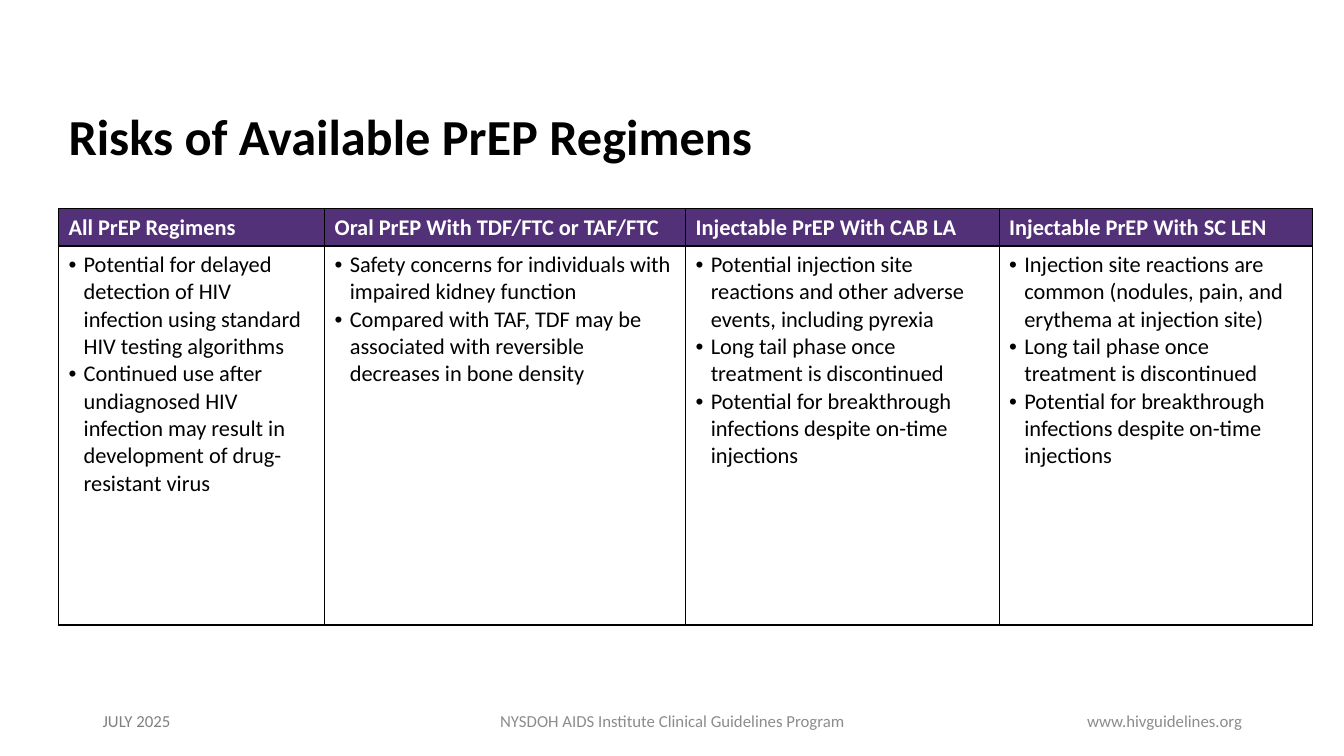
from lxml import etree
from pptx import Presentation
from pptx.dml.color import RGBColor
from pptx.enum.text import MSO_ANCHOR, PP_ALIGN
from pptx.oxml.ns import qn
from pptx.util import Inches, Pt

LEFT, CENTER, RIGHT = PP_ALIGN.LEFT, PP_ALIGN.CENTER, PP_ALIGN.RIGHT
MIDDLE = MSO_ANCHOR.MIDDLE
TITLE_ONLY = 5

LONG_TAIL = "Long tail phase once treatment is discontinued"
BREAKTHROUGH = "Potential for breakthrough infections despite on-time injections"
REGIMENS = [
    ("All PrEP Regimens", 2.64, [
        "Potential for delayed detection of HIV infection using standard HIV testing algorithms",
        "Continued use after undiagnosed HIV infection may result in development of drug-resistant virus",
    ]),
    ("Oral PrEP With TDF/FTC or TAF/FTC", 3.58, [
        "Safety concerns for individuals with impaired kidney function",
        "Compared with TAF, TDF may be associated with reversible decreases in bone density",
    ]),
    ("Injectable PrEP With CAB LA", 3.11, [
        "Potential injection site reactions and other adverse events, including pyrexia",
        LONG_TAIL,
        BREAKTHROUGH,
    ]),
    ("Injectable PrEP With SC LEN", 3.11, [
        "Injection site reactions are common (nodules, pain, and erythema at injection site)",
        LONG_TAIL,
        BREAKTHROUGH,
    ]),
]
FOOTERS = [
    ("NYSDOH AIDS Institute Clinical Guidelines Program", 4.42, 4.5, CENTER, "8C8C8C"),
    ("www.hivguidelines.org", 9.42, 3, RIGHT, "8C8C8C"),
    ("JULY 2025", 0.92, 3, LEFT, "808080"),
]


def rgb(value):
    """Return the colour for a hex string."""
    return RGBColor.from_string(value)


class SlideBuilder:
    """Holds the style and the current slide."""

    font = "Calibri"
    black = "000000"
    white = "FFFFFF"
    purple = "523178"

    def __init__(self, prs):
        """Add a title-only slide."""
        self.s = prs.slides.add_slide(prs.slide_layouts[TITLE_ONLY])

    def format(self, p, size, color, bold=False, align=LEFT):
        """Format a paragraph and its runs."""
        p.alignment = align
        for r in p.runs:
            r.font.name = self.font
            r.font.size = Pt(size)
            r.font.bold = bold
            r.font.color.rgb = rgb(color)

    def title(self, text, x, y, w, h):
        """Place and format the title."""
        sp = self.s.shapes.title
        sp.left, sp.top, sp.width, sp.height = map(Inches, (x, y, w, h))
        tf = sp.text_frame
        tf.text = text
        tf.word_wrap = True
        tf.vertical_anchor = MIDDLE
        tf.paragraphs[0].line_spacing = 0.9
        self.format(tf.paragraphs[0], 36, self.black, bold=True)

    def footer(self, text, x, w, align, color):
        """Add one footer text."""
        sp = self.s.shapes.add_textbox(Inches(x), Inches(6.95), Inches(w), Inches(0.4))
        tf = sp.text_frame
        tf.text = text
        tf.word_wrap = True
        tf.vertical_anchor = MIDDLE
        self.format(tf.paragraphs[0], 12, color, align=align)

    def borders(self, cell):
        """Draw a thin black line on each side of a cell."""
        tcPr = cell._tc.get_or_add_tcPr()
        for side in ("a:lnL", "a:lnR", "a:lnT", "a:lnB"):
            ln = etree.SubElement(tcPr, qn(side), w=str(Pt(1)))
            fill = etree.SubElement(ln, qn("a:solidFill"))
            etree.SubElement(fill, qn("a:srgbClr"), val=self.black)

    def bullet(self, p):
        """Give a paragraph a hanging bullet."""
        pPr = p._p.get_or_add_pPr()
        pPr.set("marL", str(Inches(0.15)))
        pPr.set("indent", str(-Inches(0.15)))
        etree.SubElement(pPr, qn("a:buFont"), typeface="Arial")
        etree.SubElement(pPr, qn("a:buChar"), char="•")

    def table(self, columns, x, y, heights):
        """Add a table with a header and a bulleted cell per column."""
        width = sum(w for _, w, _ in columns)
        frame = self.s.shapes.add_table(
            2, len(columns), Inches(x), Inches(y), Inches(width), Inches(sum(heights)))
        table = frame.table
        table.horz_banding = False
        for row, height in zip(table.rows, heights):
            row.height = Inches(height)
        for i, (heading, w, risks) in enumerate(columns):
            table.columns[i].width = Inches(w)
            head, body = table.cell(0, i), table.cell(1, i)
            self.borders(head)
            self.borders(body)
            head.fill.solid()
            head.fill.fore_color.rgb = rgb(self.purple)
            body.fill.background()
            head.text_frame.text = heading
            self.format(head.text_frame.paragraphs[0], 16, self.white, bold=True)
            body.text_frame.text = "\n".join(risks)
            for p in body.text_frame.paragraphs:
                self.bullet(p)
                self.format(p, 16, self.black)


def main():
    """Build and save the slide."""
    prs = Presentation()
    prs.slide_width, prs.slide_height = Inches(13.33), Inches(7.5)
    slide = SlideBuilder(prs)
    slide.title("Risks of Available PrEP Regimens", 0.58, 1.08, 10.63, 0.61)
    for footer in FOOTERS:
        slide.footer(*footer)
    slide.table(REGIMENS, 0.58, 2.07, (0.37, 3.76))
    prs.save("out.pptx")


if __name__ == "__main__":
    main()
